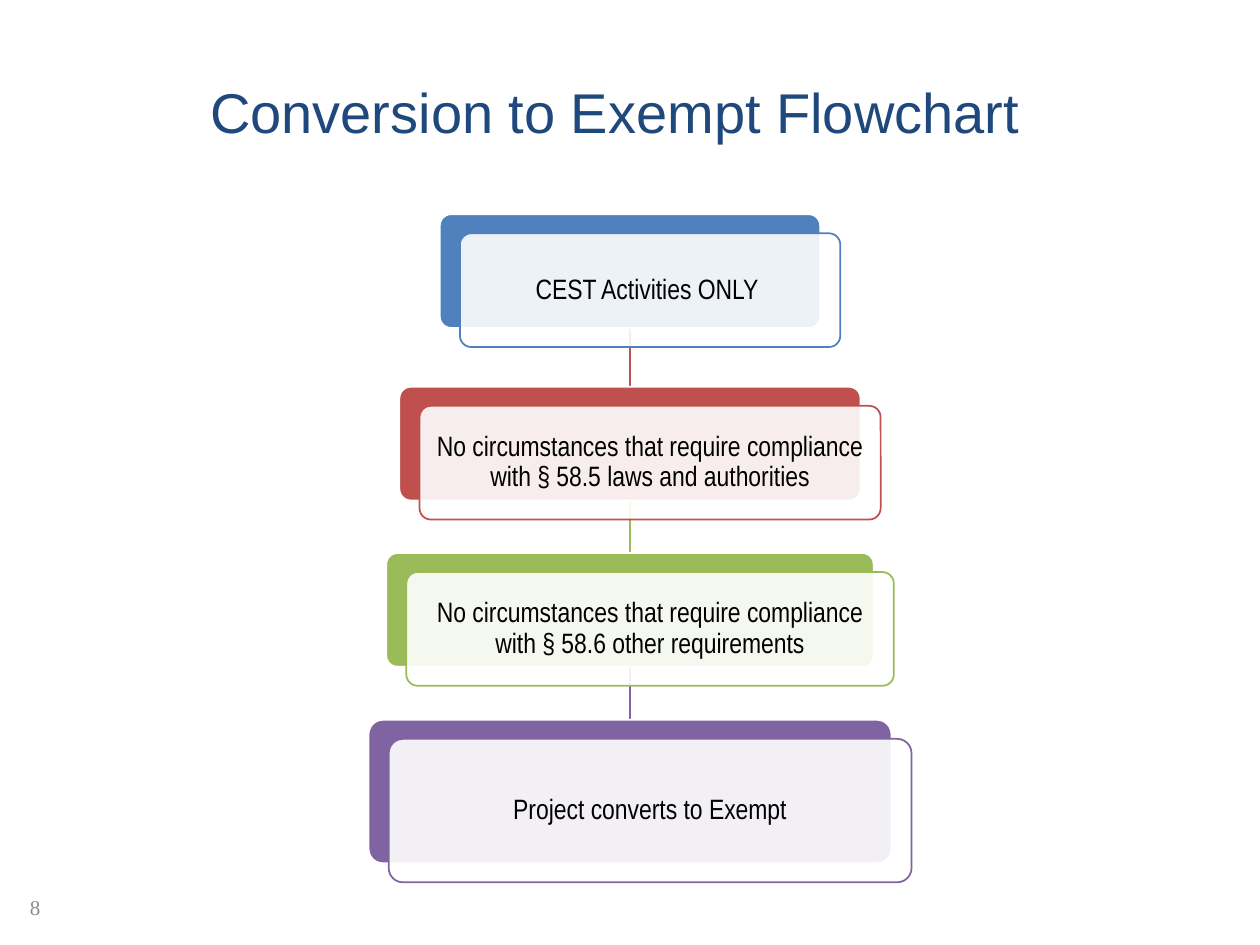
from itertools import pairwise
from lxml.etree import SubElement
from pptx import Presentation
from pptx.dml.color import RGBColor
from pptx.enum.shapes import MSO_CONNECTOR, MSO_SHAPE
from pptx.enum.text import MSO_ANCHOR, PP_ALIGN
from pptx.oxml.ns import qn
from pptx.util import Pt

TITLE = "Conversion to Exempt Flowchart "
PAGE_NUMBER = "8"
STEPS = [
    dict(text="CEST Activities ONLY ", accent="4F81BD", top=122.4, width=217.4, height=65),
    dict(text="No circumstances that require compliance with § 58.5 laws and authorities",
         accent="C0504D", top=221, width=263.5, height=65),
    dict(text="No circumstances that require compliance with § 58.6 other requirements",
         accent="9BBB59", top=316, width=278.6, height=65),
    dict(text="Project converts to Exempt", accent="8064A2", top=411.3, width=298.8, height=82),
]
THEME = dict(
    title=("Arial", 32, "1F497D"),
    step=("Arial Narrow", 16, "000000"),
    number=("Times New Roman", 12, "8C8C8C"),
    white="FFFFFF",
    card_alpha=90,
    line=1,
    corner=0.1,
)
CENTER = 360
CARD_SHIFT = (11.5, 10.9)


def write(frame, text, style, align, anchor, insets):
    frame.word_wrap = True
    frame.vertical_anchor = anchor
    frame.margin_left, frame.margin_top, frame.margin_right, frame.margin_bottom = map(Pt, insets)
    paragraph = frame.paragraphs[0]
    paragraph.alignment = align
    run = paragraph.add_run()
    run.text = text
    name, size, color = style
    run.font.name, run.font.size = name, Pt(size)
    run.font.color.rgb = RGBColor.from_string(color)
    return paragraph


def add_box(slide, left, step, shift, fill, outline):
    box = slide.shapes.add_shape(
        MSO_SHAPE.ROUNDED_RECTANGLE, Pt(left + shift[0]), Pt(step["top"] + shift[1]),
        Pt(step["width"]), Pt(step["height"]))
    box.adjustments[0] = THEME["corner"]
    box.shadow.inherit = False
    box.fill.solid()
    box.fill.fore_color.rgb = RGBColor.from_string(fill)
    box.line.color.rgb = RGBColor.from_string(outline)
    box.line.width = Pt(THEME["line"])
    return box


def add_step(slide, step):
    left = CENTER - step["width"] / 2
    add_box(slide, left, step, (0, 0), step["accent"], THEME["white"])
    card = add_box(slide, left, step, CARD_SHIFT, THEME["white"], step["accent"])
    color = card.fill._xPr.find(qn("a:solidFill"))[0]
    SubElement(color, qn("a:alpha")).set("val", str(THEME["card_alpha"] * 1000))
    label = write(card.text_frame, step["text"], THEME["step"],
                  PP_ALIGN.CENTER, MSO_ANCHOR.MIDDLE, (5, 5, 5, 5))
    label.line_spacing = 0.9


def add_link(slide, upper, lower):
    link = slide.shapes.add_connector(
        MSO_CONNECTOR.STRAIGHT, Pt(CENTER), Pt(upper["top"] + upper["height"]),
        Pt(CENTER), Pt(lower["top"]))
    link.line.color.rgb = RGBColor.from_string(lower["accent"])
    link.line.width = Pt(THEME["line"])
    SubElement(link._element.spPr, qn("a:effectLst"))


def main():
    deck = Presentation()
    deck.slide_width, deck.slide_height = Pt(720), Pt(540)
    slide = deck.slides.add_slide(deck.slide_layouts[6])

    title = slide.shapes.add_textbox(Pt(58.3), Pt(23.8), Pt(595.4), Pt(66.2))
    write(title.text_frame, TITLE, THEME["title"],
          PP_ALIGN.CENTER, MSO_ANCHOR.BOTTOM, (7.2, 3.6, 7.2, 7.2))
    number = slide.shapes.add_textbox(Pt(0), Pt(504), Pt(30.2), Pt(28.8))
    write(number.text_frame, PAGE_NUMBER, THEME["number"],
          PP_ALIGN.RIGHT, MSO_ANCHOR.MIDDLE, (7.2, 3.6, 7.2, 3.6))

    for upper, lower in pairwise(STEPS):
        add_link(slide, upper, lower)
    for step in STEPS:
        add_step(slide, step)
    deck.save("out.pptx")


if __name__ == "__main__":
    main()
